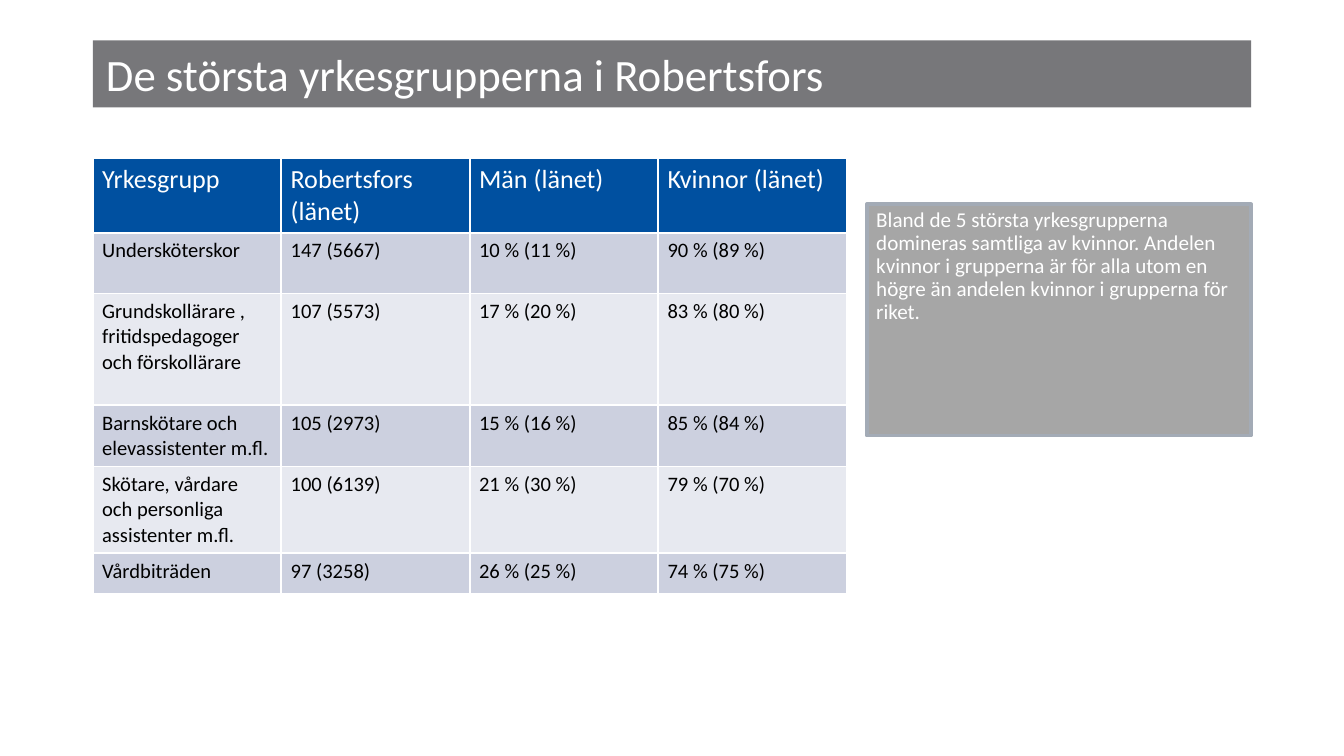
from lxml.etree import SubElement
from pptx import Presentation
from pptx.dml.color import RGBColor
from pptx.enum.shapes import MSO_SHAPE as Shape
from pptx.enum.text import MSO_ANCHOR as Anchor, PP_ALIGN as Align
from pptx.oxml.ns import qn
from pptx.util import Inches, Pt

COLORS = {
    "white": "FFFFFF",
    "black": "000000",
    "title": "77777A",
    "header": "0050A0",
    "odd": "CCD0DF",
    "even": "E7E9F0",
    "note": "A6A6A6",
    "note_line": "A3ABB6",
}
SLIDE_WIDTH = 10
LEFT = 0.69
TABLE_WIDTH = 5.61
ROW_HEIGHTS = [0.54, 0.45, 0.83, 0.45, 0.64, 0.3]
ROWS = [
    ["Yrkesgrupp", "Robertsfors (länet)", "Män (länet)", "Kvinnor (länet)"],
    ["Undersköterskor", "147 (5667)", "10 % (11 %)", "90 % (89 %)"],
    ["Grundskollärare , fritidspedagoger och förskollärare", "107 (5573)", "17 % (20 %)", "83 % (80 %)"],
    ["Barnskötare och elevassistenter m.fl.", "105 (2973)", "15 % (16 %)", "85 % (84 %)"],
    ["Skötare, vårdare och personliga assistenter m.fl.", "100 (6139)", "21 % (30 %)", "79 % (70 %)"],
    ["Vårdbiträden", "97 (3258)", "26 % (25 %)", "74 % (75 %)"],
]
NOTE = (
    "Bland de 5 största yrkesgrupperna domineras samtliga av kvinnor. "
    "Andelen kvinnor i grupperna är för alla utom en högre än andelen "
    "kvinnor i grupperna för riket."
)


class SlideBuilder:
    font_name = "Calibri"

    def __init__(self, slide):
        self.slide = slide

    def color(self, name):
        return RGBColor.from_string(COLORS[name])

    def fill(self, target, name):
        target.fill.solid()
        target.fill.fore_color.rgb = self.color(name)

    def text(self, frame, text, size, color):
        frame.word_wrap = True
        frame.text = text
        paragraph = frame.paragraphs[0]
        paragraph.alignment = Align.LEFT
        paragraph.font.name = self.font_name
        paragraph.font.size = Pt(size)
        paragraph.font.bold = False
        paragraph.font.color.rgb = self.color(color)

    def margins(self, target):
        target.margin_left = target.margin_right = Inches(0.07)
        target.margin_top = target.margin_bottom = Inches(0.04)

    def box(self, left, top, width, height, fill, text, size, line=None):
        shape = self.slide.shapes.add_shape(
            Shape.RECTANGLE, Inches(left), Inches(top), Inches(width), Inches(height))
        shape.shadow.inherit = False
        self.fill(shape, fill)
        if line:
            shape.line.color.rgb = self.color(line)
            shape.line.width = Pt(2)
        else:
            shape.line.fill.background()
        self.text(shape.text_frame, text, size, "white")
        return shape.text_frame

    def borders(self, cell):
        properties = cell._tc.get_or_add_tcPr()
        for side in "LRTB":
            line = SubElement(properties, qn(f"a:ln{side}"), w=str(Pt(1)))
            solid = SubElement(line, qn("a:solidFill"))
            SubElement(solid, qn("a:srgbClr"), val=COLORS["white"])

    def table(self, left, top, width, row_heights, rows):
        columns = len(rows[0])
        table = self.slide.shapes.add_table(
            len(rows), columns, Inches(left), Inches(top),
            Inches(width), Inches(sum(row_heights))).table
        for column in table.columns:
            column.width = Inches(width / columns)
        for index, (height, values) in enumerate(zip(row_heights, rows)):
            table.rows[index].height = Inches(height)
            if index == 0:
                fill, size, color = "header", 14, "white"
            else:
                fill = "odd" if index % 2 else "even"
                size, color = 11, "black"
            for cell, value in zip(table.rows[index].cells, values):
                self.margins(cell)
                self.borders(cell)
                self.fill(cell, fill)
                self.text(cell.text_frame, value, size, color)


def main():
    presentation = Presentation()
    presentation.slide_width = Inches(SLIDE_WIDTH)
    presentation.slide_height = Inches(SLIDE_WIDTH * 9 / 16)
    builder = SlideBuilder(presentation.slides.add_slide(presentation.slide_layouts[6]))

    title = builder.box(LEFT, 0.3, 8.62, 0.5, "title",
                        "De största yrkesgrupperna i Robertsfors", 24)
    title.vertical_anchor = Anchor.MIDDLE

    builder.table(LEFT, 1.18, TABLE_WIDTH, ROW_HEIGHTS, ROWS)

    note = builder.box(6.45, 1.52, 2.86, 1.72, "note", NOTE, 11.3, "note_line")
    note.vertical_anchor = Anchor.TOP
    note.paragraphs[0].line_spacing = 0.9
    builder.margins(note)

    presentation.save("out.pptx")


if __name__ == "__main__":
    main()
